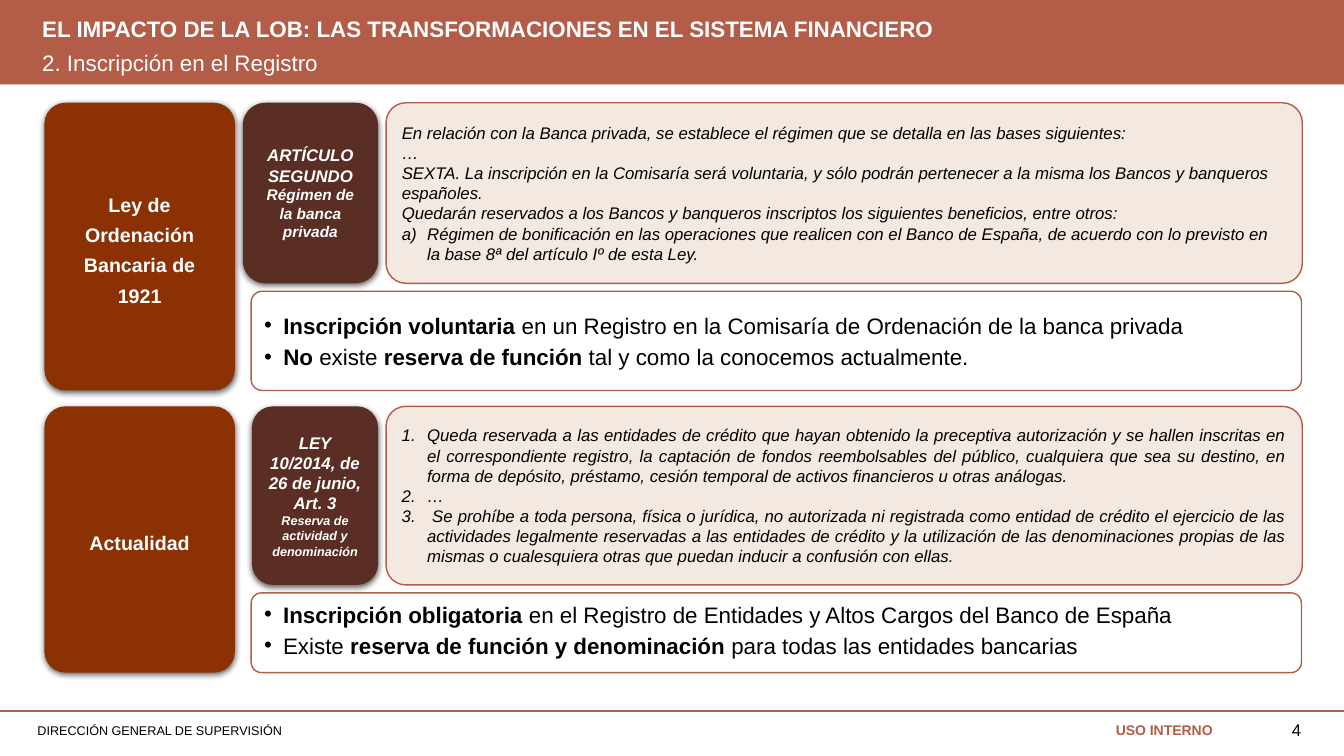
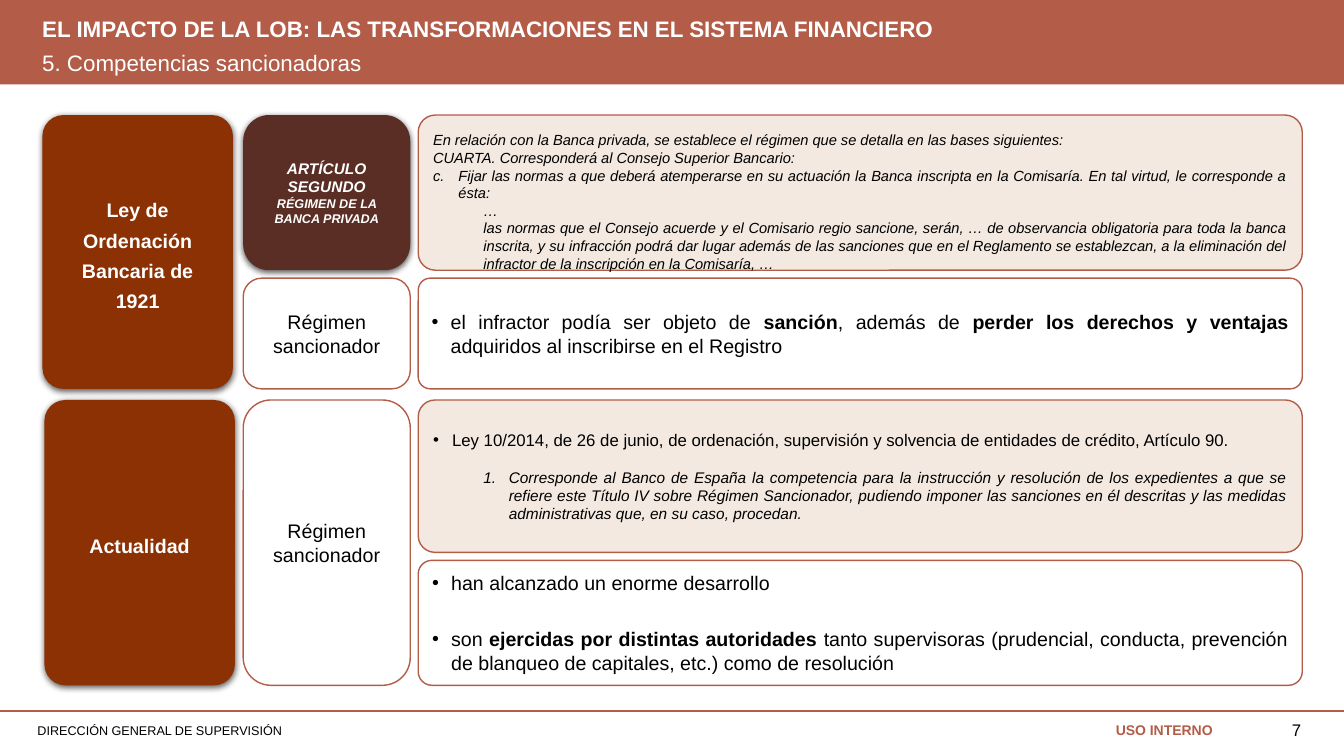
from dataclasses import dataclass, replace

from pptx import Presentation
from pptx.dml.color import RGBColor
from pptx.enum.shapes import MSO_CONNECTOR, MSO_SHAPE
from pptx.enum.text import MSO_ANCHOR, MSO_AUTO_SIZE, PP_ALIGN
from pptx.oxml.xmlchemy import OxmlElement
from pptx.util import Cm, Pt

LEFT, CENTER, RIGHT, JUSTIFY = PP_ALIGN.LEFT, PP_ALIGN.CENTER, PP_ALIGN.RIGHT, PP_ALIGN.JUSTIFY
TOP, MIDDLE = MSO_ANCHOR.TOP, MSO_ANCHOR.MIDDLE
NO_AUTOFIT = MSO_AUTO_SIZE.NONE
RECTANGLE, ROUNDED = MSO_SHAPE.RECTANGLE, MSO_SHAPE.ROUNDED_RECTANGLE
STRAIGHT = MSO_CONNECTOR.STRAIGHT


@dataclass(frozen=True)
class Theme:
    font: str = "Arial"
    terracotta: str = "B35C48"
    rust: str = "8B3104"
    brown: str = "5A2E24"
    cream: str = "F3E9E1"
    white: str = "FFFFFF"
    black: str = "000000"
    heading: float = 16
    label: float = 14
    body: float = 12
    small: float = 11
    quote: float = 10.5
    mark: float = 10
    note: float = 9


THEME = Theme()


@dataclass(frozen=True)
class Style:
    size: float
    color: str = THEME.black
    bold: bool = False
    italic: bool = False
    align: int = LEFT
    after: float = 0
    spacing: object = 1.0


@dataclass(frozen=True)
class Line:
    text: str
    style: Style
    bullet: str = ""
    start: int = 1
    margin: float = 0
    hanging: float = 0
    before: float = 0
    level: int = 0


@dataclass(frozen=True)
class Box:
    left: float
    top: float
    width: float
    height: float

    @property
    def right(self):
        return self.left + self.width

    @property
    def bottom(self):
        return self.top + self.height

    def lengths(self):
        return [Cm(round(n, 2)) for n in (self.left, self.top, self.width, self.height)]


TITLE = Style(THEME.heading, THEME.white, bold=True, spacing=0.9)
SUBTITLE = replace(TITLE, bold=False)
DEPARTMENT = Style(THEME.note, spacing=0.9)
CLASSIFICATION = Style(THEME.mark, THEME.terracotta, bold=True, align=RIGHT)
PAGE = Style(THEME.body, align=RIGHT)
ERA = Style(THEME.label, THEME.white, bold=True, align=CENTER, after=4.3, spacing=Pt(21.6))
ARTICLE = Style(THEME.body, THEME.white, bold=True, italic=True, align=CENTER)
LAW = Style(THEME.body, italic=True)
LAW_JUSTIFIED = replace(LAW, align=JUSTIFY)
QUOTE = replace(LAW_JUSTIFIED, size=THEME.quote)
CONCLUSION = Style(THEME.heading, align=JUSTIFY, after=3)
FINDING = replace(CONCLUSION, size=THEME.label)
REGIME = replace(FINDING, align=CENTER)

SLIDE_WIDTH, SLIDE_HEIGHT = 33.87, 19.05
GAP = 0.2
ERA_WIDTH = 4.8
BULLET_INDENT, NUMBER_INDENT = 0.48, 0.64
HEADING = "EL IMPACTO DE LA LOB: LAS TRANSFORMACIONES EN EL SISTEMA FINANCIERO"
LAW_1921 = "Ley de Ordenación Bancaria de 1921"


def bulleted(text, style, before=0):
    return Line(text, style, "•", 1, BULLET_INDENT, BULLET_INDENT, before)


def numbered(text, style, scheme="arabicPeriod", start=1, margin=NUMBER_INDENT, before=0, level=0):
    return Line(text, style, scheme, start, margin, NUMBER_INDENT, before, level)


def child(parent, tag, **attributes):
    element = OxmlElement(tag)
    for key, setting in attributes.items():
        element.set(key, str(setting))
    parent.append(element)
    return element


def set_bullet(paragraph, line):
    properties = paragraph._p.get_or_add_pPr()
    properties.set("marL", str(Cm(line.margin)))
    properties.set("indent", str(-Cm(line.hanging)))
    if not line.bullet:
        child(properties, "a:buNone")
    elif line.bullet == "•":
        child(properties, "a:buFont", typeface=THEME.font)
        child(properties, "a:buChar", char=line.bullet)
    else:
        child(properties, "a:buAutoNum", type=line.bullet, startAt=line.start)


def write(frame, lines, anchor=MIDDLE):
    frame.word_wrap = True
    frame.auto_size = NO_AUTOFIT
    frame.vertical_anchor = anchor
    for index, line in enumerate(lines):
        paragraph = frame.add_paragraph() if index else frame.paragraphs[0]
        style = line.style
        paragraph.level = line.level
        set_bullet(paragraph, line)
        paragraph.alignment = style.align
        paragraph.line_spacing = style.spacing
        paragraph.space_before = Pt(line.before)
        paragraph.space_after = Pt(style.after)
        for position, words in enumerate(line.text.split("*")):
            if not words:
                continue
            run = paragraph.add_run()
            run.text = words
            run.font.name = THEME.font
            run.font.size = Pt(style.size)
            run.font.bold = style.bold or position % 2 == 1
            run.font.italic = style.italic
            run.font.color.rgb = RGBColor.from_string(style.color)


def panel(slide, box, fill, lines=(), border=None, rounding=None, shadow=False,
          geometry=ROUNDED, anchor=MIDDLE, top_inset=None):
    shape = slide.shapes.add_shape(geometry, *box.lengths())
    shape.shadow.inherit = False
    shape.fill.solid()
    shape.fill.fore_color.rgb = RGBColor.from_string(fill)
    if border:
        shape.line.color.rgb = RGBColor.from_string(border)
        shape.line.width = Pt(1)
    else:
        shape.line.fill.background()
    if rounding:
        shape.adjustments[0] = rounding
    if shadow:
        effects = shape.element.spPr.find("{*}effectLst")
        outer = child(effects, "a:outerShdw", blurRad=Pt(4.5), dist=Pt(1.5), dir=5400000, rotWithShape=0)
        child(child(outer, "a:srgbClr", val=THEME.black), "a:alpha", val=63000)
    if top_inset is not None:
        shape.text_frame.margin_top = Cm(top_inset)
    write(shape.text_frame, lines, anchor)
    return shape


def era_panel(slide, box, text):
    label = replace(box, width=ERA_WIDTH)
    panel(slide, label, THEME.rust, [Line(text, ERA)], rounding=0.11, shadow=True)


def article_panel(slide, box, name, subject, name_size, subject_size):
    lines = [Line(name, replace(ARTICLE, size=name_size)),
             Line(subject, replace(ARTICLE, size=subject_size))]
    panel(slide, box, THEME.brown, lines, shadow=True)


def outlined_panel(slide, box, lines, fill=THEME.white, rounding=0.11, **options):
    panel(slide, box, fill, lines, THEME.terracotta, rounding, **options)


def registry_row(slide, box, era, article, law, conclusions, article_left, law_height,
                 conclusion_rounding=0.11, conclusion_anchor=MIDDLE):
    era_panel(slide, box, era)
    law_box = Box(box.right - 23.09, box.top, 23.09, law_height)
    article_box = Box(article_left, box.top, law_box.left - GAP - article_left, law_height)
    article_panel(slide, article_box, *article)
    outlined_panel(slide, law_box, law, THEME.cream)
    top = law_box.bottom + GAP
    conclusion_box = Box(box.right - 26.49, top, 26.47, box.bottom - top)
    outlined_panel(slide, conclusion_box, conclusions, rounding=conclusion_rounding,
                   anchor=conclusion_anchor)


def sanctions_row(slide, box, era, law, findings, law_height, article=None, **law_options):
    era_panel(slide, box, era)
    law_box = Box(box.right - 22.28, box.top, 22.28, law_height)
    regime_box = Box(law_box.left - GAP - 4.21, box.top, 4.21, box.height)
    lower_top = law_box.bottom + GAP
    if article:
        article_panel(slide, replace(regime_box, height=law_height), *article)
        regime_box = replace(regime_box, top=lower_top, height=box.bottom - lower_top)
    outlined_panel(slide, regime_box, [Line("Régimen sancionador", REGIME)], rounding=None)
    outlined_panel(slide, law_box, law, THEME.cream, **law_options)
    findings_box = replace(law_box, top=lower_top, height=box.bottom - lower_top)
    outlined_panel(slide, findings_box, findings)


def place(shape, box, text, style, anchor=MIDDLE):
    shape.left, shape.top, shape.width, shape.height = box.lengths()
    write(shape.text_frame, [Line(text, style)], anchor)


def decorate_layout(layout, slide):
    band = panel(slide, Box(0, 0, SLIDE_WIDTH, 2.13), THEME.terracotta, geometry=RECTANGLE)
    rule = slide.shapes.add_connector(STRAIGHT, 0, Cm(17.92), Cm(SLIDE_WIDTH), Cm(17.92))
    rule.line.color.rgb = RGBColor.from_string(THEME.terracotta)
    rule.line.width = Pt(1)
    child(rule.element.spPr, "a:effectLst")
    for part in (rule, band):
        layout.shapes.element.insert(2, part.element)


def fill_frame(slide, subtitle, page):
    place(slide.shapes.title, Box(0.81, 0.38, 23.6, 0.79), HEADING, TITLE)
    place(slide.placeholders[1], Box(0.81, 1.22, 23.6, 0.79), subtitle, SUBTITLE)
    place(slide.placeholders[2], Box(0.69, 18.14, 19.84, 0.71),
          "DIRECCIÓN GENERAL DE SUPERVISIÓN", DEPARTMENT, TOP)
    for box, text, style in ((Box(24.94, 18.06, 5.87, 0.81), "USO INTERNO", CLASSIFICATION),
                             (Box(31.04, 18.01, 1.75, 0.84), page, PAGE)):
        place(slide.shapes.add_textbox(*box.lengths()), box, text, style, TOP)
    slide.shapes[-1].text_frame.margin_right = 0


def registry_slide(slide):
    fill_frame(slide, "2. Inscripción en el Registro", "4")
    registry_row(
        slide, Box(1.12, 2.59, 31.7, 7.25), LAW_1921,
        ("ARTÍCULO SEGUNDO", "Régimen de la banca privada", THEME.body, THEME.small),
        [Line("En relación con la Banca privada, se establece el régimen que se detalla en las bases siguientes:", LAW),
         Line("…", LAW),
         Line("SEXTA. La inscripción en la Comisaría será voluntaria, y sólo podrán pertenecer a la misma los Bancos y banqueros españoles.", LAW),
         Line("Quedarán reservados a los Bancos y banqueros inscriptos los siguientes beneficios, entre otros:", LAW),
         numbered("Régimen de bonificación en las operaciones que realicen con el Banco de España, de acuerdo con lo previsto en la base 8ª del artículo Iº de esta Ley.", LAW, "alphaLcParenR")],
        [bulleted("*Inscripción voluntaria *en un Registro en la Comisaría de Ordenación de la banca privada", CONCLUSION),
         bulleted("*No *existe* reserva de función *tal y como la conocemos actualmente.", CONCLUSION)],
        article_left=6.12, law_height=4.55)
    registry_row(
        slide, Box(1.12, 10.24, 31.7, 6.71), "Actualidad",
        ("LEY 10/2014, de 26 de junio, Art. 3", "Reserva de actividad y denominación", THEME.body, THEME.note),
        [numbered("Queda reservada a las entidades de crédito que hayan obtenido la preceptiva autorización y se hallen inscritas en el correspondiente registro, la captación de fondos reembolsables del público, cualquiera que sea su destino, en forma de depósito, préstamo, cesión temporal de activos financieros u otras análogas.", LAW_JUSTIFIED),
         numbered("…", LAW_JUSTIFIED),
         numbered(" Se prohíbe a toda persona, física o jurídica, no autorizada ni registrada como entidad de crédito el ejercicio de las actividades legalmente reservadas a las entidades de crédito y la utilización de las denominaciones propias de las mismas o cualesquiera otras que puedan inducir a confusión con ellas.", LAW_JUSTIFIED)],
        [bulleted("*Inscripción obligatoria* en el Registro de Entidades y Altos Cargos del Banco de España", CONCLUSION),
         bulleted("Existe *reserva de función y denominación* para todas las entidades bancarias", CONCLUSION)],
        article_left=6.35, law_height=4.5, conclusion_rounding=0.13, conclusion_anchor=TOP)


def sanctions_slide(slide):
    fill_frame(slide, "5. Competencias sancionadoras", "7")
    sanctions_row(
        slide, Box(1.07, 2.9, 31.75, 6.9), LAW_1921,
        [Line("En relación con la Banca privada, se establece el régimen que se detalla en las bases siguientes:", QUOTE),
         Line("CUARTA. Corresponderá al Consejo Superior Bancario:", QUOTE),
         numbered("Fijar las normas a que deberá atemperarse en su actuación la Banca inscripta en la Comisaría. En tal virtud, le corresponde a ésta:", QUOTE, "alphaLcPeriod", 3),
         Line("…", QUOTE, margin=1.27, level=1),
         Line("las normas que el Consejo acuerde y el Comisario regio sancione, serán, … de observancia obligatoria para toda la banca inscrita, y su infracción podrá dar lugar además de las sanciones que en el Reglamento se establezcan, a la eliminación del infractor de la inscripción en la Comisaría, …", QUOTE, margin=1.27, level=1)],
        [bulleted("el infractor podía ser objeto de *sanción*, además de *perder los derechos y ventajas* adquiridos al inscribirse en el Registro", FINDING)],
        law_height=3.91,
        article=("ARTÍCULO SEGUNDO", "RÉGIMEN DE LA BANCA PRIVADA", THEME.small, THEME.note),
        anchor=TOP, top_inset=0.28)
    sanctions_row(
        slide, Box(1.12, 10.08, 31.7, 7.19), "Actualidad",
        [bulleted("Ley 10/2014, de 26 de junio, de ordenación, supervisión y solvencia de entidades de crédito, Artículo 90.", replace(LAW_JUSTIFIED, italic=False)),
         numbered("Corresponde al Banco de España la competencia para la instrucción y resolución de los expedientes a que se refiere este Título IV sobre Régimen Sancionador, pudiendo imponer las sanciones en él descritas y las medidas administrativas que, en su caso, procedan.", replace(LAW_JUSTIFIED, size=THEME.small), margin=1.91, before=13, level=1)],
        [bulleted("han alcanzado un enorme desarrollo", FINDING),
         bulleted("son *ejercidas por distintas autoridades* tanto supervisoras (prudencial, conducta, prevención de blanqueo de capitales, etc.) como de resolución", FINDING, before=20)],
        law_height=3.84)


def main():
    presentation = Presentation()
    presentation.slide_width, presentation.slide_height = Cm(SLIDE_WIDTH), Cm(SLIDE_HEIGHT)
    layout = presentation.slide_layouts[3]
    for placeholder in list(layout.placeholders):
        if placeholder.placeholder_format.idx >= 10:
            layout.shapes.element.remove(placeholder.element)
    registry, sanctions = [presentation.slides.add_slide(layout) for _ in range(2)]
    decorate_layout(layout, registry)
    registry_slide(registry)
    sanctions_slide(sanctions)
    presentation.save("out.pptx")


if __name__ == "__main__":
    main()
